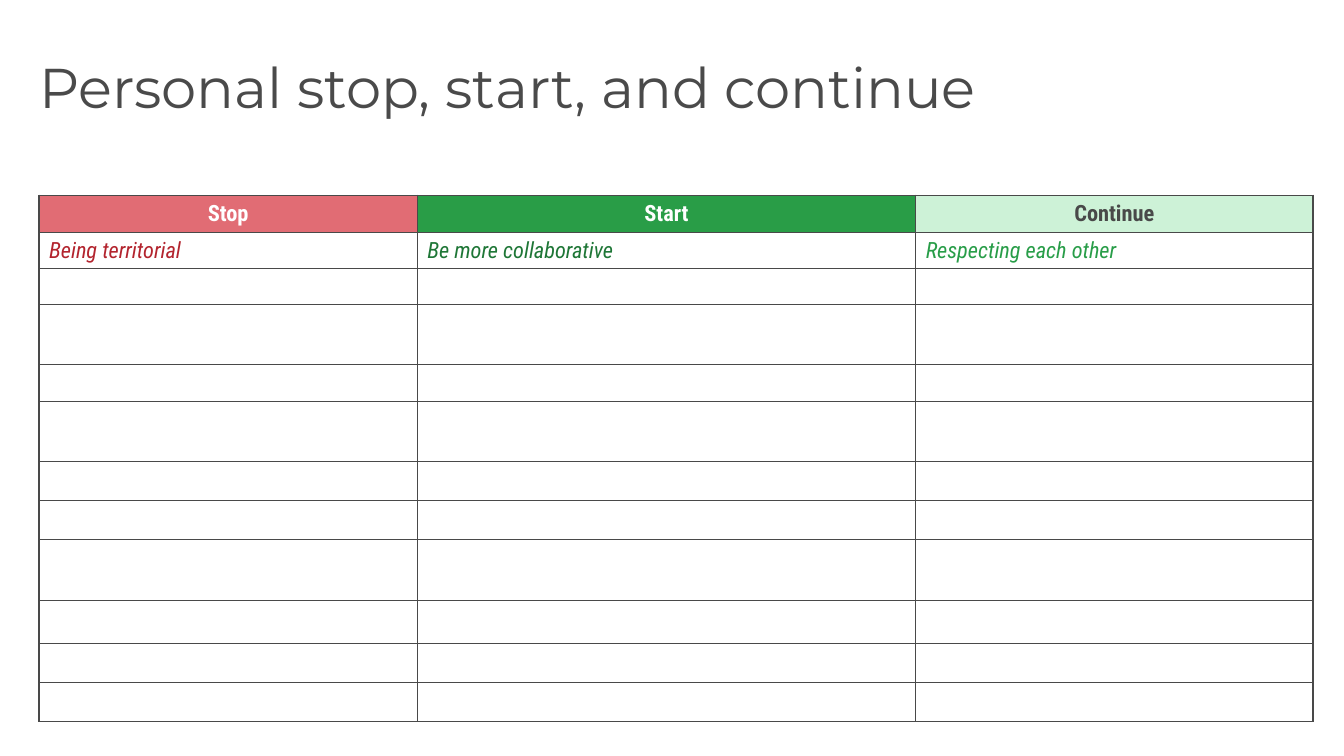
from dataclasses import dataclass

from lxml.etree import SubElement
from pptx import Presentation
from pptx.dml.color import RGBColor
from pptx.enum.text import MSO_ANCHOR, MSO_AUTO_SIZE, PP_ALIGN
from pptx.oxml.ns import qn
from pptx.util import Pt

EMU_PER_PX = 9080


@dataclass(frozen=True)
class Theme:
    title_font: str = "Montserrat"
    table_font: str = "Roboto Condensed"
    title_size: int = 40
    table_size: int = 16
    empty_size: int = 12
    title: str = "4A4A4A"
    border: str = "494949"
    white: str = "FFFFFF"
    stop: str = "E16C74"
    start: str = "299D47"
    keep: str = "CDF2D7"
    stop_text: str = "B3242E"
    start_text: str = "1E7636"
    keep_text: str = "289D48"


THEME = Theme()
COLUMN_WIDTHS = [378, 498, 397]
ROW_HEIGHTS = [37, 36, 36, 60, 37, 60, 39, 39, 61, 43, 39, 39]
HEADERS = [
    ("Stop", THEME.white, THEME.stop),
    ("Start", THEME.white, THEME.start),
    ("Continue", THEME.border, THEME.keep),
]
EXAMPLES = [
    ("Being territorial", THEME.stop_text),
    ("Be more collaborative", THEME.start_text),
    ("Respecting each other", THEME.keep_text),
]


def px(n):
    return n * EMU_PER_PX


def style_run(r, font, size, color, bold=False, italic=False):
    r.font.name = font
    r.font.size = Pt(size)
    r.font.color.rgb = RGBColor.from_string(color)
    r.font.bold = bold
    r.font.italic = italic


def add_title(s, text, x, y, w, h):
    sp = s.shapes.title
    sp.left, sp.top, sp.width, sp.height = px(x), px(y), px(w), px(h)
    tf = sp.text_frame
    tf.text = text
    tf.word_wrap = True
    tf.auto_size = MSO_AUTO_SIZE.NONE
    tf.vertical_anchor = MSO_ANCHOR.TOP
    tf.margin_left = tf.margin_top = tf.margin_right = tf.margin_bottom = 0
    p = tf.paragraphs[0]
    p.alignment = PP_ALIGN.LEFT
    p.line_spacing = 0.9
    style_run(p.runs[0], THEME.title_font, THEME.title_size, THEME.title)


def format_cell(cell, fill):
    tc_pr = cell._tc.get_or_add_tcPr()
    for side in ("lnL", "lnR", "lnT", "lnB"):
        ln = SubElement(tc_pr, qn(f"a:{side}"), w=str(Pt(1)))
        solid = SubElement(ln, qn("a:solidFill"))
        SubElement(solid, qn("a:srgbClr"), val=THEME.border)
    cell.fill.solid()
    cell.fill.fore_color.rgb = RGBColor.from_string(fill)


def write_cell(cell, text, color, header=False):
    cell.text_frame.text = text
    p = cell.text_frame.paragraphs[0]
    style_run(p.runs[0], THEME.table_font, THEME.table_size, color, header, not header)
    if header:
        p.alignment = PP_ALIGN.CENTER
        cell.vertical_anchor = MSO_ANCHOR.MIDDLE


def size_empty_cell(cell):
    p = cell.text_frame.paragraphs[0]
    SubElement(p._p, qn("a:endParaRPr"), sz=str(THEME.empty_size * 100))


def add_table(s, x, y):
    table = s.shapes.add_table(
        len(ROW_HEIGHTS), len(COLUMN_WIDTHS), px(x), px(y),
        px(sum(COLUMN_WIDTHS)), px(sum(ROW_HEIGHTS)),
    ).table
    table.first_row = table.horz_banding = False
    for column, width in zip(table.columns, COLUMN_WIDTHS):
        column.width = px(width)
    for i, height in enumerate(ROW_HEIGHTS):
        table.rows[i].height = px(height)
        for j, cell in enumerate(table.rows[i].cells):
            format_cell(cell, HEADERS[j][2] if i == 0 else THEME.white)
            if i == 0:
                write_cell(cell, *HEADERS[j][:2], header=True)
            elif i == 1:
                write_cell(cell, *EXAMPLES[j])
            else:
                size_empty_cell(cell)


def main():
    prs = Presentation()
    prs.slide_width, prs.slide_height = px(1343), px(755)
    s = prs.slides.add_slide(prs.slide_layouts[5])
    add_title(s, "Personal stop, start, and continue", 39, 60, 1269, 125)
    add_table(s, 39, 195)
    prs.save("out.pptx")


if __name__ == "__main__":
    main()
